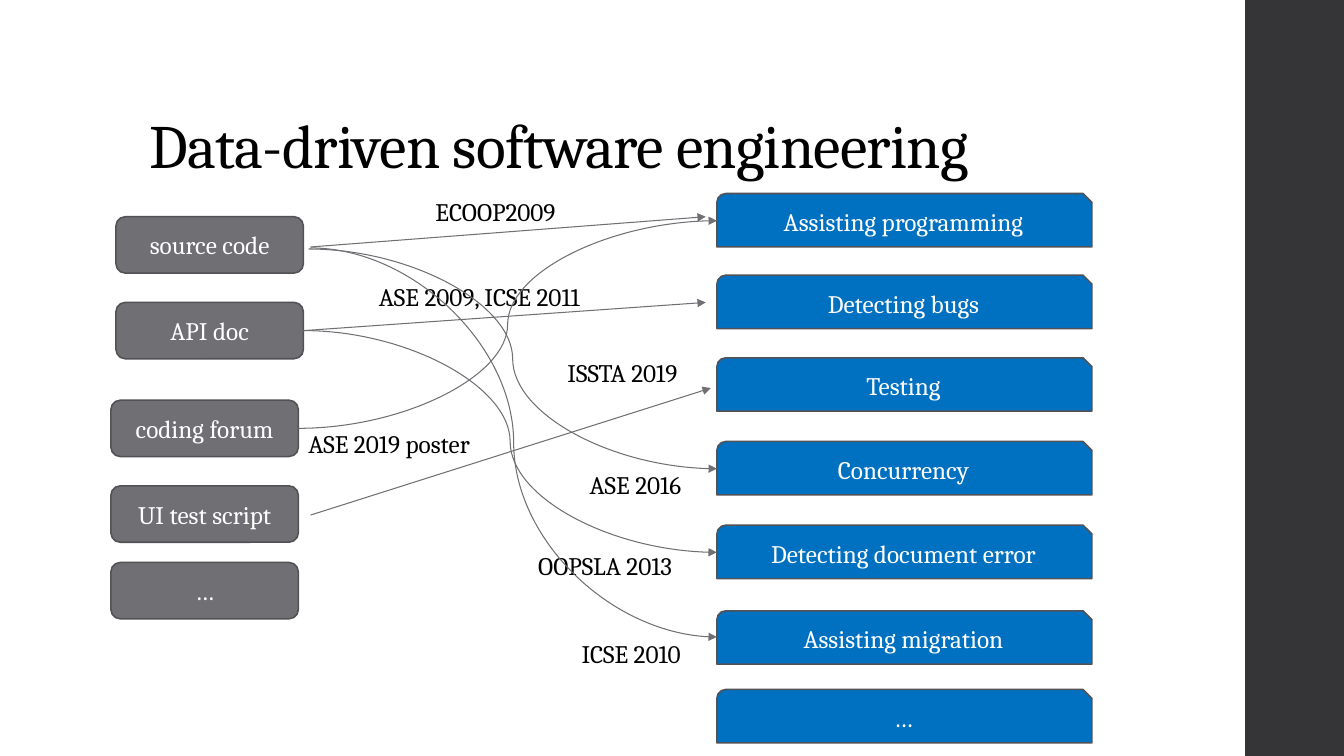
from pptx import Presentation
from pptx.dml.color import RGBColor
from pptx.enum.shapes import MSO_CONNECTOR as LINK, MSO_SHAPE as SHAPE
from pptx.enum.text import MSO_ANCHOR as ANCHOR, MSO_AUTO_SIZE as FIT, PP_ALIGN as ALIGN
from pptx.oxml.ns import qn
from pptx.util import Inches, Pt
from lxml.etree import SubElement

COLORS = {
    "sidebar": "353537", "source": "6F6F74", "goal": "0070C0",
    "outline": "525256", "link": "6F6F74", "dark": "000000", "light": "FFFFFF",
}


def write(shape, text, size, color, align):
    shape.text_frame.text = text
    para = shape.text_frame.paragraphs[0]
    para.alignment = align
    para.font.name = "Cambria"
    para.font.size = Pt(size)
    para.font.color.rgb = RGBColor.from_string(COLORS[color])
    return para


def add_block(kind, left, top, width, height, fill):
    shape = page.shapes.add_shape(
        kind, Inches(left), Inches(top), Inches(width), Inches(height))
    shape.shadow.inherit = False
    shape.fill.solid()
    shape.fill.fore_color.rgb = RGBColor.from_string(COLORS[fill])
    return shape


deck = Presentation()
deck.slide_width, deck.slide_height = Inches(13.33), Inches(7.5)
page = deck.slides.add_slide(deck.slide_layouts[5])

# Sidebar
sidebar = add_block(SHAPE.RECTANGLE, 12.35, 0, 0.98, 7.5, "sidebar")
sidebar.line.fill.background()

# Title
title = page.shapes.title
title.left, title.top = Inches(1.38), Inches(0.4)
title.width, title.height = Inches(10.6), Inches(1.45)
heading = write(title, "Data-driven software engineering", 44, "dark", ALIGN.LEFT)
heading.line_spacing = 0.9
heading.runs[0].font._element.set("spc", "-50")
title.text_frame.vertical_anchor = ANCHOR.BOTTOM
title.text_frame.auto_size = FIT.NONE

# Data sources on the left, goals on the right
sources = [
    ("source code", 1.15, 2.15), ("API doc", 1.15, 3), ("coding forum", 1.1, 3.97),
    ("UI test script", 1.1, 4.82), ("…", 1.1, 5.58),
]
goals = [
    ("Assisting programming", 7.11, 1.92), ("Detecting bugs", 7.11, 2.73),
    ("Testing", 7.11, 3.55), ("Concurrency", 7.11, 4.38),
    ("Detecting document error", 7.11, 5.21), ("Assisting migration", 7.11, 6.06),
    ("…", 7.11, 6.84),
]
columns = [
    (sources, SHAPE.ROUNDED_RECTANGLE, 1.86, 0.56, "source"),
    (goals, SHAPE.SNIP_ROUND_RECTANGLE, 3.72, 0.53, "goal"),
]
for blocks, kind, width, height, fill in columns:
    for text, left, top in blocks:
        block = add_block(kind, left, top, width, height, fill)
        block.line.color.rgb = RGBColor.from_string(COLORS["outline"])
        block.line.width = Pt(1.1)
        block.text_frame.vertical_anchor = ANCHOR.MIDDLE
        write(block, text, 18, "light", ALIGN.CENTER)

# Arrows from source to goal, each with its publication: start, end, label box
links = [
    (LINK.STRAIGHT, (3.08, 2.45), (7, 2.15), "ECOOP2009", (4.22, 1.9, 1.69)),
    (LINK.STRAIGHT, (3.01, 3.28), (7, 3), "ASE 2009, ICSE 2011", (3.66, 2.74, 2.76)),
    (LINK.STRAIGHT, (3.08, 5.11), (7.05, 3.85), "ISSTA 2019", (5.53, 3.5, 1.61)),
    (LINK.CURVE, (3.01, 3.28), (7.11, 5.48), "OOPSLA 2013", (5.24, 5.41, 1.9)),
    (LINK.CURVE, (3.08, 2.46), (7.11, 6.32), "ICSE 2010", (5.67, 6.28, 1.46)),
    (LINK.CURVE, (3.06, 2.47), (7.11, 4.65), "ASE 2016", (5.75, 4.61, 1.36)),
    (LINK.CURVE, (2.96, 4.25), (7.11, 2.19), "ASE 2019 poster", (2.96, 4.2, 2.15)),
]
for kind, start, end, text, (left, top, width) in links:
    arrow = page.shapes.add_connector(kind, *map(Inches, start + end))
    arrow.line.color.rgb = RGBColor.from_string(COLORS["link"])
    arrow.line.width = Pt(0.75)
    SubElement(arrow.line._get_or_add_ln(), qn("a:tailEnd"), type="triangle")
    SubElement(arrow._element.spPr, qn("a:effectLst"))

    box = page.shapes.add_textbox(Inches(left), Inches(top), Inches(width), Inches(0.4))
    box.text_frame.word_wrap = True
    write(box, text, 18, "dark", ALIGN.LEFT)

deck.save("out.pptx")
